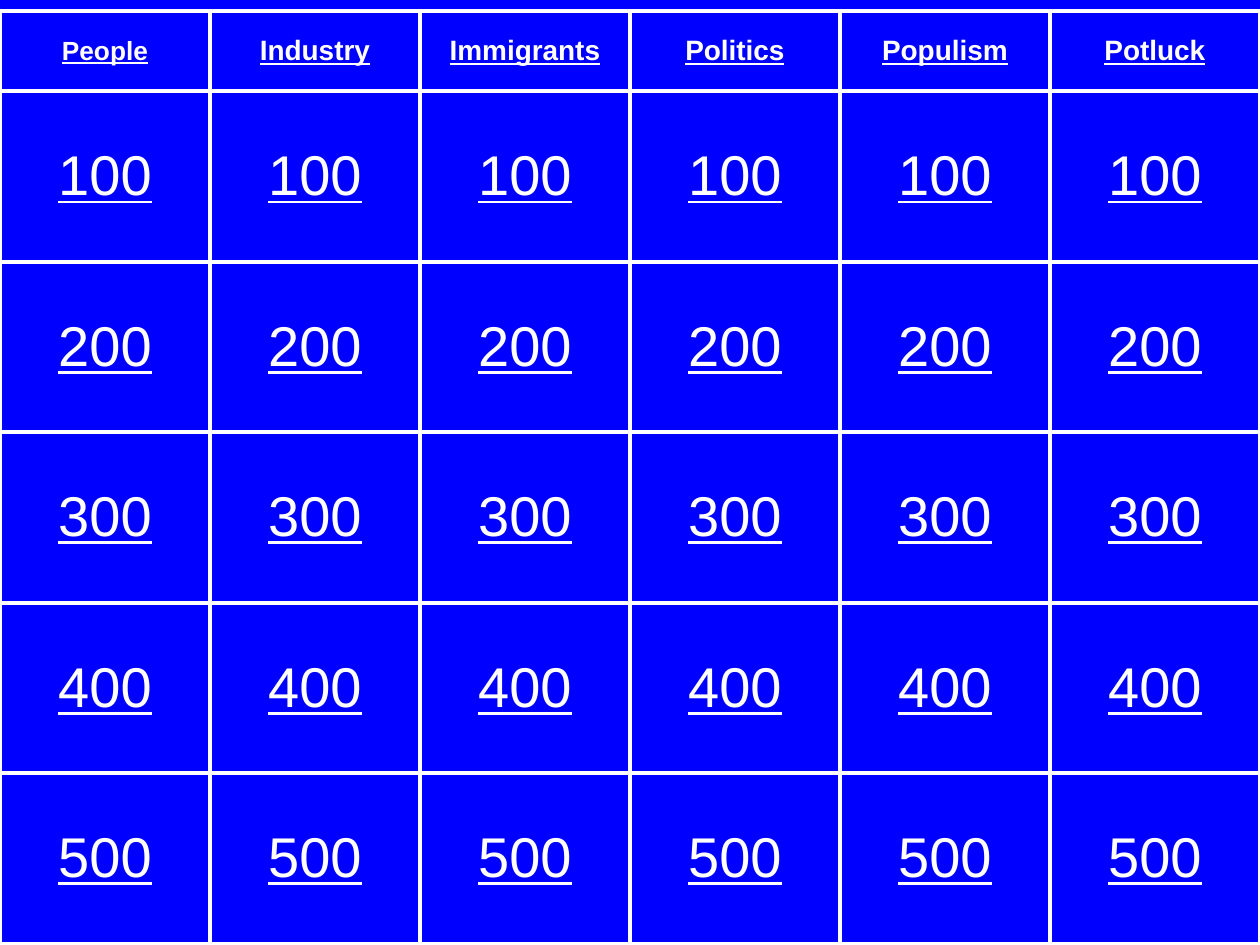
"""Build a quiz board slide: six topics with five point values each."""
from dataclasses import dataclass

from lxml import etree
from pptx import Presentation
from pptx.dml.color import RGBColor
from pptx.enum.text import MSO_ANCHOR, PP_ALIGN
from pptx.oxml.ns import qn
from pptx.util import Emu, Pt

CENTER = PP_ALIGN.CENTER
MIDDLE = MSO_ANCHOR.MIDDLE
PX = 914400 // 126
WIDE, HIGH, TOP = 1260, 945, 11
BLUE, WHITE = "0000FF", "FFFFFF"
SIDES = ("a:lnL", "a:lnR", "a:lnT", "a:lnB")


@dataclass(frozen=True)
class Topic:
    name: str
    size: int = 16


@dataclass(frozen=True)
class Level:
    points: int
    height: int


TOPICS = (
    Topic("People", 15),
    Topic("Industry"),
    Topic("Immigrants"),
    Topic("Politics"),
    Topic("Populism"),
    Topic("Potluck"),
)
HEAD = 80
LEVELS = (
    Level(100, 171),
    Level(200, 170),
    Level(300, 171),
    Level(400, 170),
    Level(500, 171),
)


def px(length: int) -> Emu:
    return Emu(length * PX)


def color(value: str) -> RGBColor:
    return RGBColor.from_string(value)


def write(frame, text: str, *, size: int, bold: bool = False) -> None:
    para = frame.paragraphs[0]
    para.alignment = CENTER
    run = para.add_run()
    run.text = text
    font = run.font
    font.name, font.size = "Arial", Pt(size)
    font.bold, font.underline = bold, True
    font.color.rgb = color(WHITE)


def edge(cell, tint: str, width: int) -> None:
    props = cell._tc.get_or_add_tcPr()
    for index, side in enumerate(SIDES):
        line = etree.Element(qn(side), w=str(Pt(width)))
        fill = etree.SubElement(line, qn("a:solidFill"))
        etree.SubElement(fill, qn("a:srgbClr"), val=tint)
        props.insert(index, line)


def draw_cell(cell, text: str, *, size: int, bold: bool = False) -> None:
    cell.fill.solid()
    cell.fill.fore_color.rgb = color(BLUE)
    cell.vertical_anchor = MIDDLE
    edge(cell, WHITE, 3)
    write(cell.text_frame, text, size=size, bold=bold)


def draw_board(slide) -> None:
    heights = [HEAD] + [level.height for level in LEVELS]
    table = slide.shapes.add_table(
        len(heights), len(TOPICS), 0, px(TOP), px(WIDE), px(sum(heights))
    ).table
    for row, height in zip(table.rows, heights):
        row.height = px(height)
    for col, topic in enumerate(TOPICS):
        table.columns[col].width = px(WIDE // len(TOPICS))
        draw_cell(table.cell(0, col), topic.name, size=topic.size, bold=True)
        for row, level in enumerate(LEVELS, 1):
            draw_cell(table.cell(row, col), str(level.points), size=32)


def main() -> None:
    deck = Presentation()
    deck.slide_width, deck.slide_height = px(WIDE), px(HIGH)
    slide = deck.slides.add_slide(deck.slide_layouts[6])
    back = slide.background.fill
    back.solid()
    back.fore_color.rgb = color(BLUE)
    draw_board(slide)
    deck.save("out.pptx")


if __name__ == "__main__":
    main()
